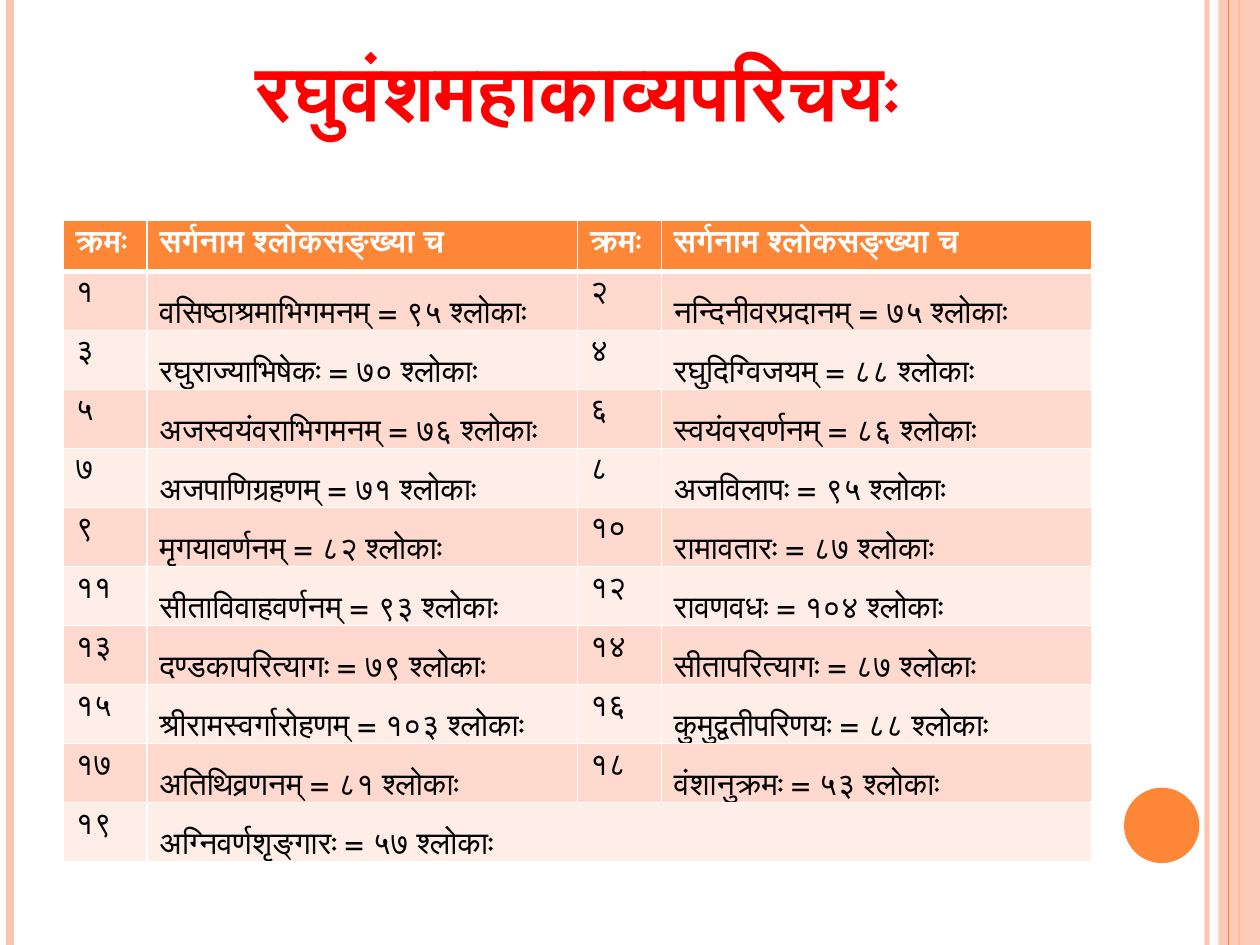
from lxml import etree
from pptx import Presentation
from pptx import util as u
from pptx.dml.color import RGBColor
from pptx.enum import shapes, text
from pptx.oxml.ns import qn

COLORS = {
    "orange": "FE8637", "peach": "FEC3AE", "dark band": "FFD9CE",
    "light band": "FFEDE8", "white": "FFFFFF", "black": "000000", "red": "FF0000",
}
TITLE_FONT, TABLE_FONT = "DejaVu Sans Mono", "TeX Gyre Schola"
HEIGHT = 19.05


def add_text(paragraph, content, font, size, color, bold):
    run = paragraph.add_run()
    run.text = content
    run.font.name = font
    run.font.size = u.Pt(size)
    run.font.bold = bold
    run.font.color.rgb = RGBColor.from_string(COLORS[color])
    return run


def set_alpha(parent, percent):
    color = parent.find(".//" + qn("a:srgbClr"))
    etree.SubElement(color, qn("a:alpha"), val=str(percent * 1000))


presentation = Presentation()
presentation.slide_width = u.Cm(25.4)
presentation.slide_height = u.Cm(HEIGHT)
slide = presentation.slides.add_slide(presentation.slide_layouts[6])

# Vertical rules on both edges
rules = []
for x, color, width in [(24.33, "peach", 3), (0.2, "peach", 4.5),
                        (24.98, "orange", 1.5), (24.77, "orange", 0.75)]:
    rule = slide.shapes.add_connector(
        shapes.MSO_CONNECTOR.STRAIGHT, u.Cm(x), u.Cm(0), u.Cm(x), u.Cm(HEIGHT))
    rule.line.color.rgb = RGBColor.from_string(COLORS[color])
    rule.line.width = u.Pt(width)
    etree.SubElement(rule._element.spPr, qn("a:effectLst"))
    rules.append(rule)
right_rule, left_rule, band_rule, thin_rule = rules
set_alpha(right_rule._element.spPr, 93)

# Right band and circle
decorations = []
for kind, box, color in [
    (shapes.MSO_SHAPE.RECTANGLE, (24.56, 0, 0.84, HEIGHT), "peach"),
    (shapes.MSO_SHAPE.OVAL, (22.66, 15.88, 1.52, 1.52), "orange"),
]:
    shape = slide.shapes.add_shape(kind, *[u.Cm(length) for length in box])
    shape.shadow.inherit = False
    shape.fill.solid()
    shape.fill.fore_color.rgb = RGBColor.from_string(COLORS[color])
    shape.line.fill.background()
    decorations.append(shape)
band, circle = decorations
set_alpha(band._element.spPr, 87)
band_rule.begin_connect(band, 0)
band_rule.end_connect(band, 2)
# The thin rule lies over the band
band._element.addnext(thin_rule._element)

# Title
title = slide.shapes.add_textbox(u.Cm(1.27), u.Cm(0.64), u.Cm(20.75), u.Cm(2.22))
title.text_frame.word_wrap = True
title.text_frame.vertical_anchor = text.MSO_ANCHOR.BOTTOM
paragraph = title.text_frame.paragraphs[0]
paragraph.alignment = text.PP_ALIGN.CENTER
run = add_text(paragraph, "रघुवंशमहाकाव्यपरिचयः", TITLE_FONT, 44, "red", True)
run.font._element.set("cap", "small")

# Cantos in order: name and number of verses
cantos = [
    ("वसिष्ठाश्रमाभिगमनम्", "९५"), ("नन्दिनीवरप्रदानम्", "७५"),
    ("रघुराज्याभिषेकः", "७०"), ("रघुदिग्विजयम्", "८८"),
    ("अजस्वयंवराभिगमनम्", "७६"), ("स्वयंवरवर्णनम्", "८६"),
    ("अजपाणिग्रहणम्", "७१"), ("अजविलापः", "९५"),
    ("मृगयावर्णनम्", "८२"), ("रामावतारः", "८७"),
    ("सीताविवाहवर्णनम्", "९३"), ("रावणवधः", "१०४"),
    ("दण्डकापरित्यागः", "७९"), ("सीतापरित्यागः", "८७"),
    ("श्रीरामस्वर्गारोहणम्", "१०३"), ("कुमुद्वतीपरिणयः", "८८"),
    ("अतिथिव्रणनम्", "८१"), ("वंशानुक्रमः", "५३"),
    ("अग्निवर्णशृङ्गारः", "५७"),
]
digits = str.maketrans("0123456789", "०१२३४५६७८९")
entries = ["क्रमः", "सर्गनाम श्लोकसङ्ख्या च"] * 2
for number, (name, verses) in enumerate(cantos, 1):
    entries += [str(number).translate(digits), f"{name} = {verses} श्लोकाः"]

# Table: two cantos to a row, the last name spans the rest of its row
row_count = 11
table = slide.shapes.add_table(
    row_count, 4, u.Cm(1.27), u.Cm(4.45), u.Cm(20.74), u.Cm(12.9)).table
for index, width in enumerate([1.69, 8.68] * 2):
    table.columns[index].width = u.Cm(width)
for index, row in enumerate(table.rows):
    row.height = u.Cm(1.19 if index else 1.02)
table.cell(row_count - 1, 1).merge(table.cell(row_count - 1, 3))

for index, cell in enumerate(table.iter_cells()):
    row, column = divmod(index, 4)
    header = row == 0
    fill = "orange" if header else "dark band" if row % 2 else "light band"
    # White borders, thicker under the header
    properties = cell._tc.get_or_add_tcPr()
    for side in "LRTB":
        thick = (header and side == "B") or (row == 1 and side == "T")
        border = etree.SubElement(
            properties, qn(f"a:ln{side}"), w=str(u.Pt(3 if thick else 1)))
        solid = etree.SubElement(border, qn("a:solidFill"))
        etree.SubElement(solid, qn("a:srgbClr"), val=COLORS["white"])
    cell.fill.solid()
    cell.fill.fore_color.rgb = RGBColor.from_string(COLORS[fill])
    # Names sit a little lower than their numbers
    if column % 2 and not header:
        cell.margin_top, cell.margin_bottom = u.Cm(0.33), u.Cm(0)
    if index < len(entries):
        add_text(cell.text_frame.paragraphs[0], entries[index], TABLE_FONT, 18,
                 "white" if header else "black", header)

presentation.save("out.pptx")
